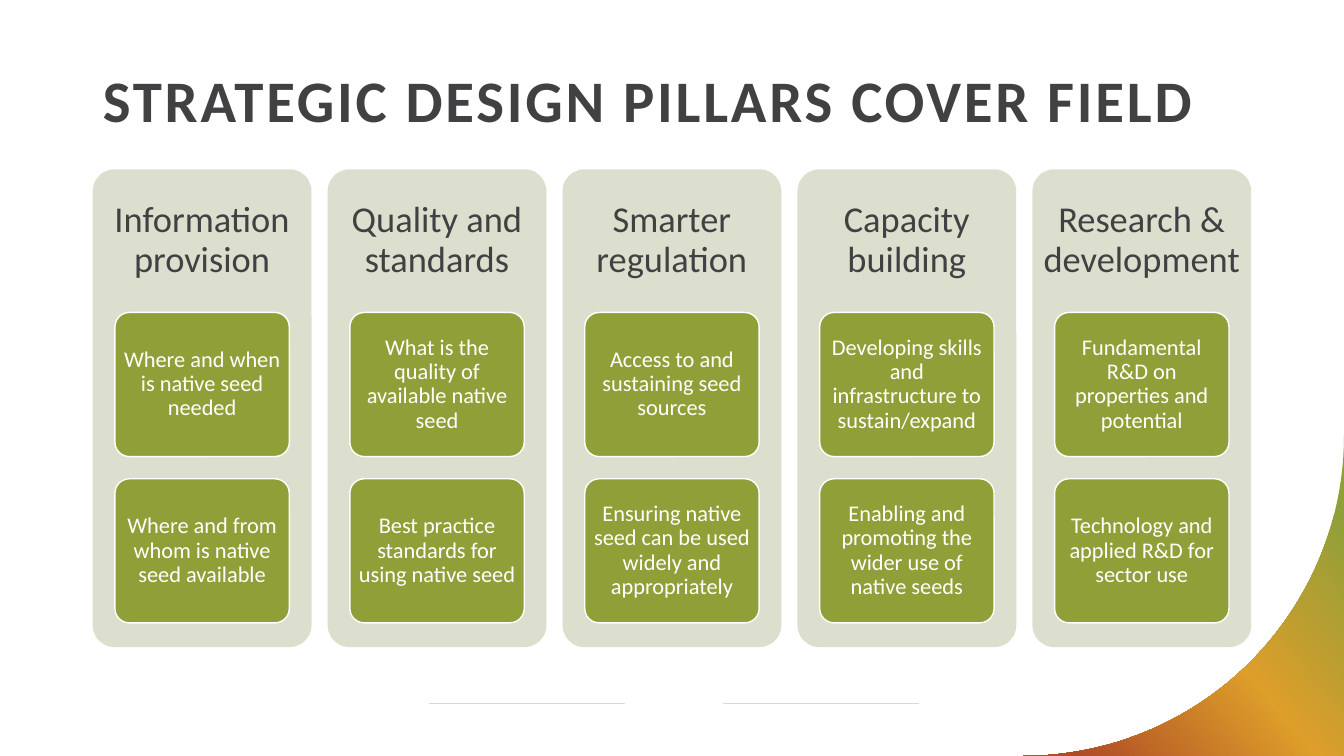
"""Build the slide on the strategic design pillars and save it as out.pptx."""
from copy import deepcopy
from dataclasses import dataclass
from math import cos, pi, sin

from lxml import etree
from pptx import Presentation
from pptx.dml.color import RGBColor
from pptx.enum.shapes import MSO_CONNECTOR, MSO_SHAPE
from pptx.enum.text import MSO_ANCHOR, MSO_AUTO_SIZE, PP_ALIGN
from pptx.oxml.ns import qn
from pptx.util import Inches, Pt

TITLE = "STRATEGIC DESIGN PILLARS COVER FIELD"
PILLARS = [
    ("Information provision",
     ["Where and when is native seed needed",
      "Where and from whom is native seed available"]),
    ("Quality and standards",
     ["What is the quality of available native seed",
      "Best practice standards for using native seed"]),
    ("Smarter regulation",
     ["Access to and sustaining seed sources",
      "Ensuring native seed can be used widely and appropriately"]),
    ("Capacity building",
     ["Developing skills and infrastructure to sustain/expand",
      "Enabling and promoting the wider use of native seeds"]),
    ("Research & development",
     ["Fundamental R&D on properties and potential",
      "Technology and applied R&D for sector use"]),
]

STRAIGHT = MSO_CONNECTOR.STRAIGHT
ROUNDED = MSO_SHAPE.ROUNDED_RECTANGLE
TOP, MIDDLE = MSO_ANCHOR.TOP, MSO_ANCHOR.MIDDLE
LEFT, CENTER = PP_ALIGN.LEFT, PP_ALIGN.CENTER
NO_AUTOFIT = MSO_AUTO_SIZE.NONE
TITLE_ONLY = 5


@dataclass(frozen=True)
class Theme:
    """Colours, font and type sizes."""
    font: str = "Calibri"
    ink: str = "414042"
    white: str = "FFFFFF"
    panel: str = "DCDFCE"
    card: str = "919F39"
    rule: str = "D9D8DA"
    corner: tuple = ((0.12, "919F39"), (0.5, "DD9E2A"), (0.91, "AF4C26"))
    title_size: int = 42
    heading_size: int = 26
    card_size: int = 16


THEME = Theme()
SLIDE_W, SLIDE_H = 13.33, 7.5
PANEL_LEFT, PANEL_TOP, PANEL_W, PANEL_H = 0.92, 1.68, 2.17, 4.74
PANEL_PITCH = 2.33
CARD_TOP, CARD_W, CARD_H, CARD_PITCH = 3.1, 1.73, 1.43, 1.65
CARD_INDENT = (PANEL_W - CARD_W) / 2
RULE_Y, RULE_W, RULE_LEFTS = 6.98, 1.95, (4.25, 7.17)
CORNER_RADIUS, CORNER_STEPS = 3.18, 90


def color(hex_code):
    return RGBColor.from_string(hex_code)


def write(shape, text, size, hex_code, insets, align=CENTER, anchor=MIDDLE, bold=False):
    frame = shape.text_frame
    frame.text = text
    frame.word_wrap = True
    frame.auto_size = NO_AUTOFIT
    frame.vertical_anchor = anchor
    (frame.margin_left, frame.margin_top,
     frame.margin_right, frame.margin_bottom) = map(Inches, insets)
    paragraph = frame.paragraphs[0]
    paragraph.alignment = align
    paragraph.line_spacing = 0.9
    run = paragraph.runs[0]
    run.font.name = THEME.font
    run.font.size = Pt(size)
    run.font.bold = bold
    run.font.color.rgb = color(hex_code)
    return run


def add_box(slide, left, top, width, height, fill):
    box = slide.shapes.add_shape(ROUNDED, *map(Inches, (left, top, width, height)))
    box.adjustments[0] = 0.1
    box.shadow.inherit = False
    box.fill.solid()
    box.fill.fore_color.rgb = color(fill)
    box.line.fill.background()
    return box


def add_title(slide):
    title = slide.shapes.title
    title.left, title.top, title.width, title.height = map(Inches, (0.92, 0.66, 11.5, 1.02))
    run = write(title, TITLE, THEME.title_size, THEME.ink,
                (0.1, 0.05, 0.1, 0.05), LEFT, TOP, True)
    run.font._element.set("spc", "200")


def add_rules(slide):
    for left in RULE_LEFTS:
        rule = slide.shapes.add_connector(
            STRAIGHT, *map(Inches, (left, RULE_Y, left + RULE_W, RULE_Y)))
        rule.line.color.rgb = color(THEME.rule)
        rule.line.width = Pt(0.5)
        etree.SubElement(rule._element.spPr, qn("a:effectLst"))


def add_corner(slide):
    center_x, center_y = SLIDE_W - CORNER_RADIUS, SLIDE_H - CORNER_RADIUS
    angles = [step * pi / 2 / CORNER_STEPS for step in range(CORNER_STEPS + 1)]
    arc = [(Inches(center_x + CORNER_RADIUS * cos(angle)),
            Inches(center_y + CORNER_RADIUS * sin(angle))) for angle in angles]
    outline = slide.shapes.build_freeform(Inches(SLIDE_W), Inches(SLIDE_H))
    outline.add_line_segments(arc, close=True)
    corner = outline.convert_to_shape()
    corner.shadow.inherit = False
    corner.line.fill.background()
    corner.fill.gradient()
    corner.fill.gradient_angle = 220
    stop_list = corner._element.spPr.find(qn("a:gradFill")).find(qn("a:gsLst"))
    stop_list.append(deepcopy(stop_list[0]))
    for stop, (position, hex_code) in zip(corner.fill.gradient_stops, THEME.corner):
        stop.position = position
        stop.color.rgb = color(hex_code)


def add_pillars(slide):
    for column, (heading, topics) in enumerate(PILLARS):
        left = PANEL_LEFT + column * PANEL_PITCH
        panel = add_box(slide, left, PANEL_TOP, PANEL_W, PANEL_H, THEME.panel)
        write(panel, heading, THEME.heading_size, THEME.ink, (0.04, 0.05, 0.04, 3.37))
        for row, topic in enumerate(topics):
            card = add_box(slide, left + CARD_INDENT, CARD_TOP + row * CARD_PITCH,
                           CARD_W, CARD_H, THEME.card)
            card.line.color.rgb = color(THEME.white)
            card.line.width = Pt(1)
            write(card, topic, THEME.card_size, THEME.white, (0.04, 0.03, 0.04, 0.03))


def main():
    deck = Presentation()
    deck.slide_width, deck.slide_height = Inches(SLIDE_W), Inches(SLIDE_H)
    slide = deck.slides.add_slide(deck.slide_layouts[TITLE_ONLY])
    add_rules(slide)
    add_corner(slide)
    add_title(slide)
    add_pillars(slide)
    deck.save("out.pptx")


if __name__ == "__main__":
    main()
